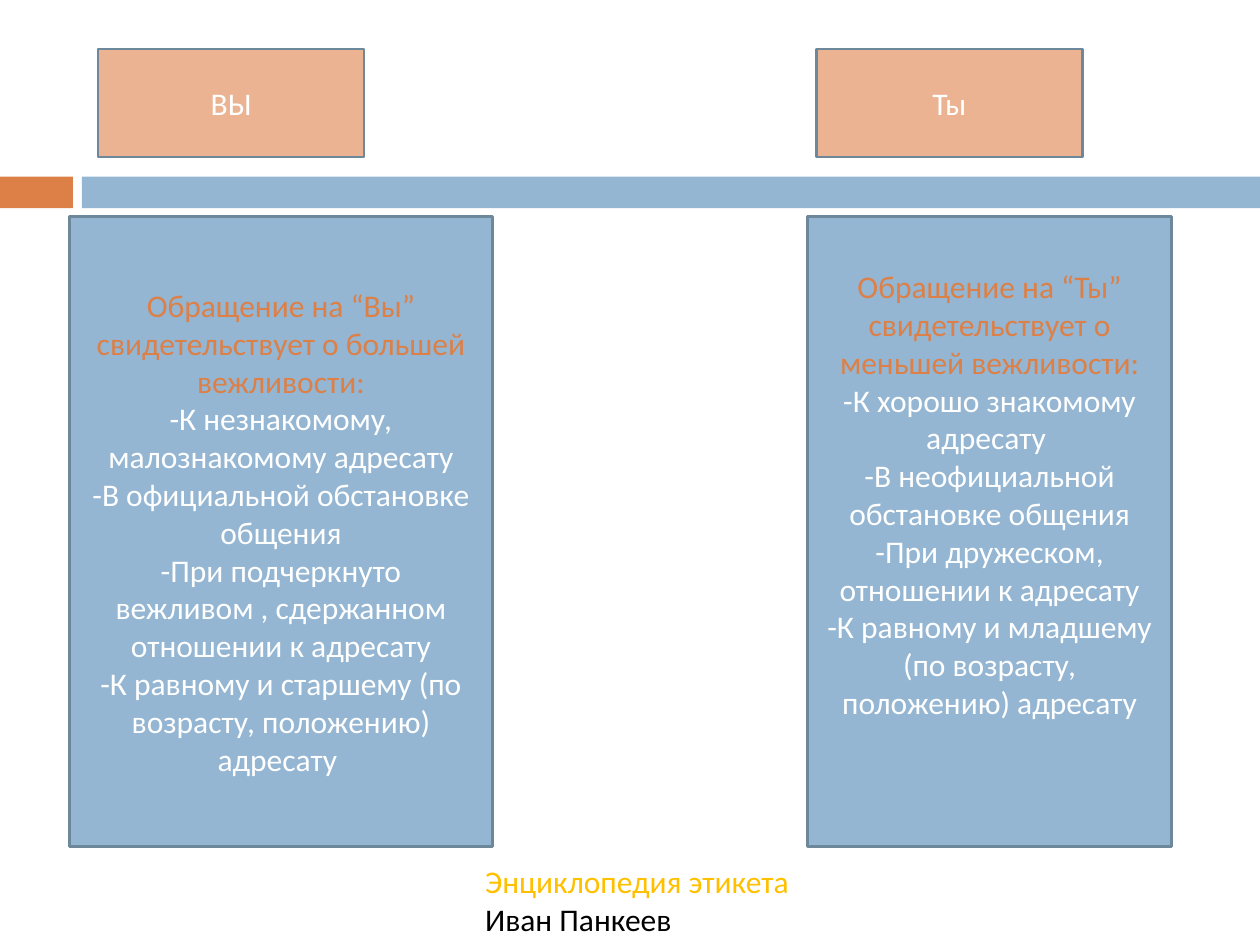
"""Build a slide comparing the formal and informal Russian forms of address."""
from typing import NamedTuple, Optional

from pptx import Presentation
from pptx.dml.color import RGBColor
from pptx.enum.shapes import MSO_SHAPE as Shape
from pptx.enum.text import MSO_ANCHOR as Anchor, MSO_AUTO_SIZE as Fit, PP_ALIGN as Align
from pptx.util import Cm, Pt

WHITE = RGBColor(0xFF, 0xFF, 0xFF)
BLACK = RGBColor(0x00, 0x00, 0x00)
BLUE = RGBColor(0x94, 0xB6, 0xD2)
ORANGE = RGBColor(0xDD, 0x80, 0x47)
PEACH = RGBColor(0xEB, 0xB3, 0x91)
SLATE = RGBColor(0x6D, 0x87, 0x9B)
GOLD = RGBColor(0xFF, 0xC0, 0x00)


class Box(NamedTuple):
    left: float
    top: float
    width: float
    height: float
    fill: RGBColor
    line: Optional[RGBColor] = None
    head: str = ""
    items: tuple[str, ...] = ()
    foot: float = 0.13


def write(frame, lines: list[tuple[str, RGBColor]], align: Align) -> None:
    for i, (text, color) in enumerate(lines):
        para = frame.add_paragraph() if i else frame.paragraphs[0]
        para.text = text
        para.alignment = align
        para.font.name = "Calibri"
        para.font.size = Pt(18)
        para.font.color.rgb = color


def draw(slide, box: Box) -> None:
    shape = slide.shapes.add_shape(Shape.RECTANGLE, *map(Cm, box[:4]))
    shape.shadow.inherit = False
    shape.fill.solid()
    shape.fill.fore_color.rgb = box.fill
    if box.line is None:
        shape.line.fill.background()
    else:
        shape.line.color.rgb = box.line
        shape.line.width = Pt(1.5)
    lines = [(box.head, ORANGE)] if box.head else []
    lines += [(item, WHITE) for item in box.items]
    frame = shape.text_frame
    frame.word_wrap = True
    frame.vertical_anchor = Anchor.MIDDLE
    frame.margin_bottom = Cm(box.foot)
    write(frame, lines, Align.CENTER)


def cite(slide) -> None:
    label = slide.shapes.add_textbox(Cm(9.53), Cm(17.25), Cm(6.86), Cm(1.8))
    frame = label.text_frame
    frame.word_wrap = False
    frame.auto_size = Fit.SHAPE_TO_FIT_TEXT
    write(frame, [("Энциклопедия этикета", GOLD), ("Иван Панкеев", BLACK)], Align.LEFT)


BOXES = (
    Box(0, 3.56, 1.47, 0.64, ORANGE),
    Box(1.65, 3.56, 23.75, 0.64, BLUE),
    Box(1.4, 4.37, 8.53, 12.7, BLUE, SLATE,
        "Обращение на “Вы” свидетельствует о большей вежливости:",
        ("-К незнакомому, малознакомому адресату",
         "-В официальной обстановке общения",
         "-При подчеркнуто вежливом , сдержанном отношении к адресату",
         "-К равному и старшему (по возрасту, положению) адресату ")),
    Box(16.28, 4.37, 7.34, 12.7, BLUE, SLATE,
        "Обращение на “Ты” свидетельствует о меньшей вежливости:",
        ("-К хорошо знакомому адресату ",
         "-В неофициальной обстановке общения",
         "-При дружеском, отношении к адресату",
         "-К равному и младшему (по возрасту, положению) адресату"), 1.65),
    Box(1.98, 0.99, 5.36, 2.18, PEACH, SLATE, items=("ВЫ",)),
    Box(16.46, 0.99, 5.36, 2.18, PEACH, SLATE, items=("Ты",)),
)


def main() -> None:
    deck = Presentation()
    deck.slide_width, deck.slide_height = Cm(25.4), Cm(19.05)
    slide = deck.slides.add_slide(deck.slide_layouts[6])
    for box in BOXES:
        draw(slide, box)
    cite(slide)
    deck.save("out.pptx")


if __name__ == "__main__":
    main()
